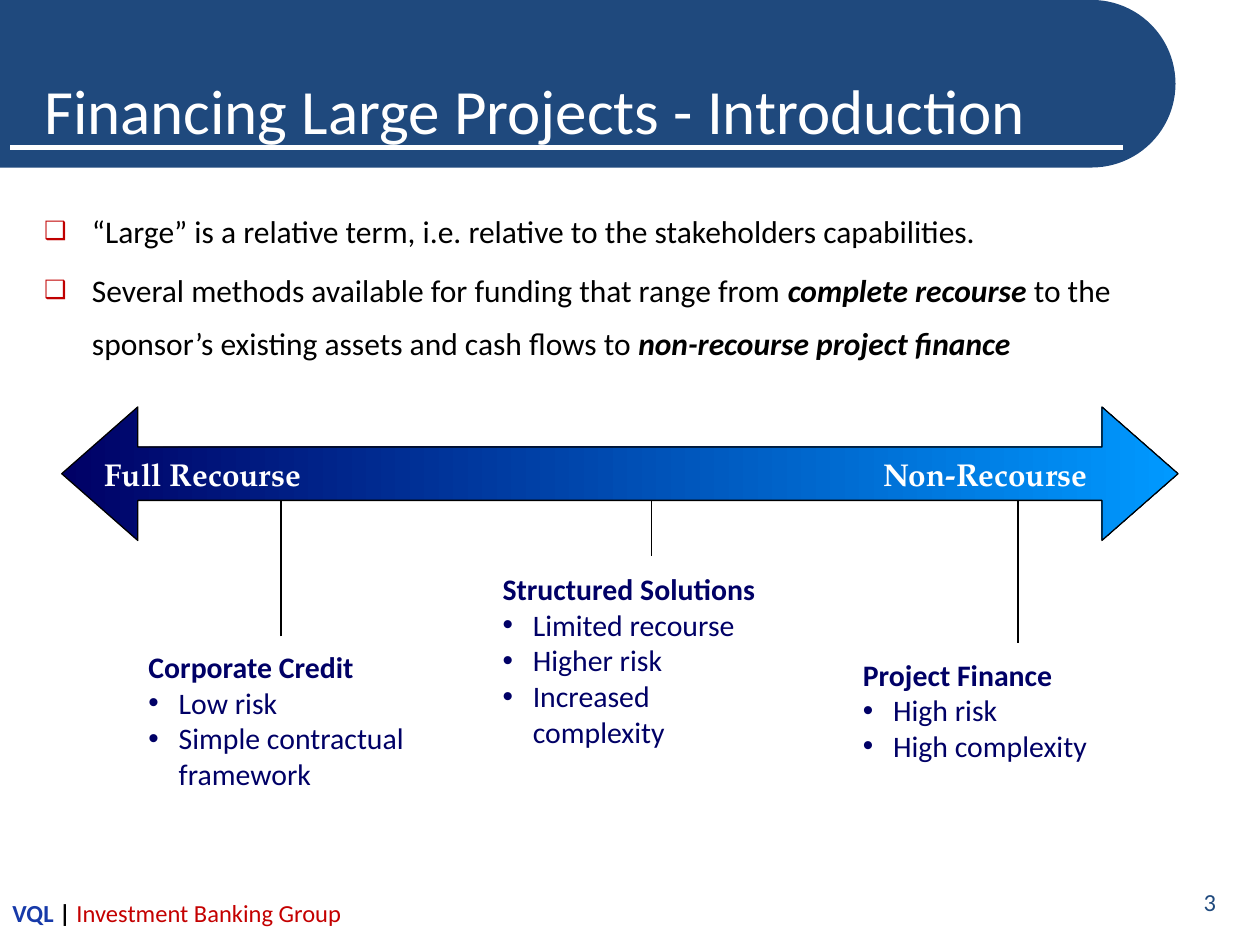
import math

from lxml import etree
from pptx import Presentation
from pptx import util as u
from pptx.dml.color import RGBColor
from pptx.enum import shapes, text
from pptx.oxml import ns

SCALE = 9144
FONT = "Calibri"
ARROW_FONT = "TeX Gyre Pagella"
WHITE = RGBColor(0xFF, 0xFF, 0xFF)
BLACK = RGBColor(0, 0, 0)
HEADER_BLUE = RGBColor(0x1F, 0x49, 0x7D)
NAVY = RGBColor(0, 0, 0x66)
SKY = RGBColor(0, 0x99, 0xFF)
BULLET_RED = RGBColor(0xC0, 0, 0)
BRAND_BLUE = RGBColor(0x17, 0x3A, 0xA9)
BRAND_RED = RGBColor(0xC4, 0, 0)

TITLE = "Financing Large Projects - Introduction"
POINTS = [
    [("“Large” is a relative term, i.e. relative to the stakeholders capabilities.", False)],
    [
        ("Several methods available for funding that range from ", False),
        ("complete recourse", True),
        (" to the sponsor’s existing assets and cash flows to ", False),
        ("non-recourse project finance", True),
    ],
]
OPTIONS = [
    ((108, 510, 250, 125), "Corporate Credit", ["Low risk", "Simple contractual framework"]),
    ((389, 448, 237, 125), "Structured Solutions",
     ["Limited recourse", "Higher risk", "Increased complexity"]),
    ((675, 516, 220, 96), "Project Finance", ["High risk", "High complexity"]),
]
STEMS = [(223, 505), (517, 441), (808, 510)]
STEM_TOP = 398


def px(value):
    return u.Emu(round(value * SCALE))


def place(shape, left, top, width, height):
    shape.left, shape.top = px(left), px(top)
    shape.width, shape.height = px(width), px(height)


def set_font(font, size, color, bold=False, name=FONT):
    font.name, font.size, font.bold = name, u.Pt(size), bold
    font.color.rgb = color


def set_bullet(para, char, indent, color=None, percent=None):
    props = para._p.get_or_add_pPr()
    props.set("marL", str(px(indent)))
    props.set("indent", str(-px(indent)))
    if color is not None:
        holder = etree.SubElement(props, ns.qn("a:buClr"))
        etree.SubElement(holder, ns.qn("a:srgbClr"), val=str(color))
    if percent:
        etree.SubElement(props, ns.qn("a:buSzPct"), val=str(percent * 1000))
    etree.SubElement(props, ns.qn("a:buFont"), typeface="Arial")
    etree.SubElement(props, ns.qn("a:buChar"), char=char)


def add_box(page, area, anchor=text.MSO_ANCHOR.TOP):
    box = page.shapes.add_textbox(*map(px, area))
    box.text_frame.word_wrap = True
    box.text_frame.vertical_anchor = anchor
    return box.text_frame


def add_label(page, area, words, size, color, align, bold=False, name=FONT):
    para = add_box(page, area, text.MSO_ANCHOR.MIDDLE).paragraphs[0]
    para.text = words
    para.alignment = align
    set_font(para.font, size, color, bold, name)


def add_line(page, start, end, color, weight):
    line = page.shapes.add_connector(
        shapes.MSO_CONNECTOR.STRAIGHT, *map(px, start), *map(px, end))
    line.line.color.rgb = color
    line.line.width = u.Pt(weight)
    etree.SubElement(line._element.spPr, ns.qn("a:effectLst"))


def add_header(page):
    radius, center, steps = 66.5, 866.5, 48
    angles = [math.pi * (step / steps - 0.5) for step in range(steps + 1)]
    arc = [(px(center + radius * math.cos(angle)), px(radius + radius * math.sin(angle)))
           for angle in angles]
    builder = page.shapes.build_freeform(0, 0)
    builder.add_line_segments(arc + [(0, px(2 * radius))], close=True)
    header = builder.convert_to_shape()
    header.shadow.inherit = False
    header.fill.solid()
    header.fill.fore_color.rgb = HEADER_BLUE
    header.line.fill.background()
    add_line(page, (8, 117), (891, 117), WHITE, 3)


def fill_title(page):
    title = page.shapes.title
    title.element.getparent().append(title.element)
    place(title, 25, 58, 925, 58)
    frame = title.text_frame
    frame.text = TITLE
    frame.auto_size = text.MSO_AUTO_SIZE.NONE
    frame.vertical_anchor = text.MSO_ANCHOR.MIDDLE
    para = frame.paragraphs[0]
    para.alignment = text.PP_ALIGN.LEFT
    set_font(para.font, 36, WHITE)


def fill_body(page):
    body = page.placeholders[1]
    place(body, 25, 151, 950, 499)
    frame = body.text_frame
    frame.auto_size = text.MSO_AUTO_SIZE.NONE
    for index, parts in enumerate(POINTS):
        para = frame.add_paragraph() if index else frame.paragraphs[0]
        set_bullet(para, "❑", 38, BULLET_RED, 80)
        para.line_spacing = 1.4
        para.space_before = u.Pt(3.6)
        set_font(para.font, 18, BLACK)
        for words, strong in parts:
            span = para.add_run()
            span.text = words
            if strong:
                span.font.bold = span.font.italic = True


def add_arrow(page):
    arrow = page.shapes.add_shape(
        shapes.MSO_SHAPE.LEFT_RIGHT_ARROW, *map(px, (49, 323, 886, 106)))
    arrow.adjustments[0], arrow.adjustments[1] = 0.4, 0.57
    arrow.shadow.inherit = False
    arrow.fill.gradient()
    arrow.fill.gradient_angle = 0
    for stop, position, color in zip(arrow.fill.gradient_stops, (0, 1), (NAVY, SKY)):
        stop.position = position
        stop.color.rgb = color
    arrow.line.color.rgb = BLACK
    arrow.line.width = u.Pt(0.75)
    ends = [(73, "Full Recourse", text.PP_ALIGN.LEFT),
            (653, "Non-Recourse", text.PP_ALIGN.RIGHT)]
    for left, words, align in ends:
        add_label(page, (left, 356, 220, 40), words, 18, WHITE, align, True, ARROW_FONT)


def add_option(page, area, heading, items):
    frame = add_box(page, area)
    frame.text = "\n".join([heading] + items)
    for index, para in enumerate(frame.paragraphs):
        if index:
            set_bullet(para, "•", 24)
        set_font(para.font, 17, NAVY, bold=index == 0)


def add_footer(page):
    para = add_box(page, (0, 708, 359, 42)).paragraphs[0]
    parts = [("VQL ", BRAND_BLUE, True), ("| ", BLACK, True),
             ("Investment Banking Group", BRAND_RED, False)]
    for words, color, bold in parts:
        span = para.add_run()
        span.text = words
        set_font(span.font, 14, color, bold)
    add_label(page, (742, 690, 233, 52), "3", 14, HEADER_BLUE, text.PP_ALIGN.RIGHT)


def main():
    deck = Presentation()
    deck.slide_width, deck.slide_height = px(1000), px(750)
    page = deck.slides.add_slide(deck.slide_layouts[1])
    add_header(page)
    fill_title(page)
    fill_body(page)
    add_arrow(page)
    for option in OPTIONS:
        add_option(page, *option)
    for x, bottom in STEMS:
        add_line(page, (x, bottom), (x, STEM_TOP), BLACK, 0.75)
    add_footer(page)
    deck.save("out.pptx")


if __name__ == "__main__":
    main()
